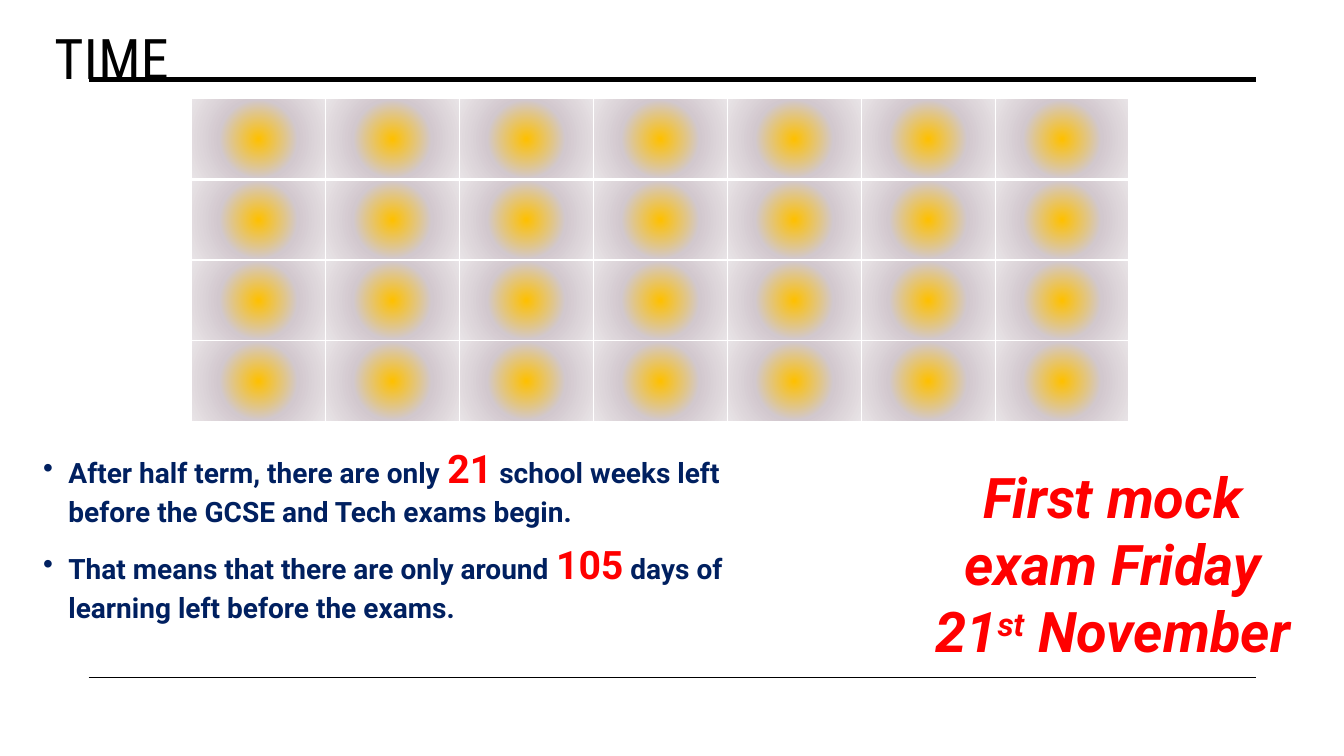
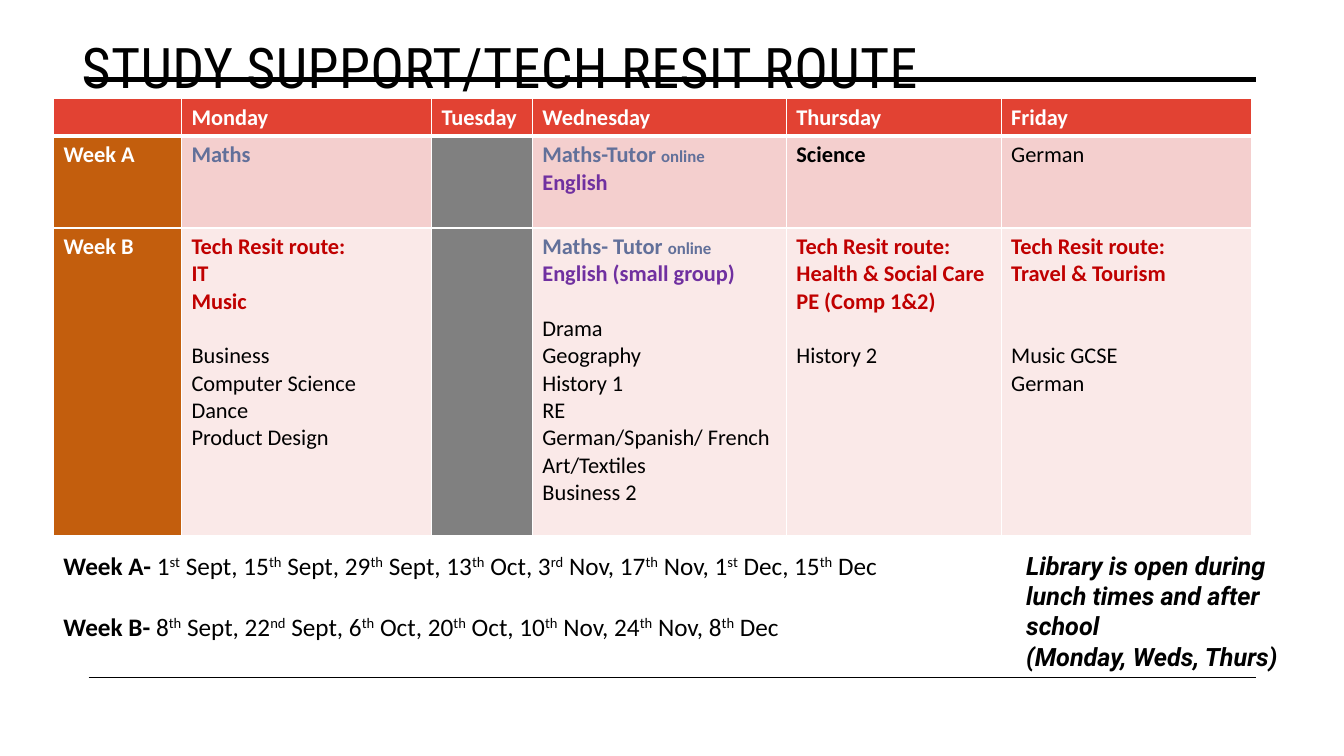
from dataclasses import dataclass, replace
from typing import Optional

from lxml.etree import SubElement
from pptx import Presentation
from pptx.dml.color import RGBColor
from pptx.enum.shapes import MSO_CONNECTOR
from pptx.enum.text import MSO_ANCHOR, MSO_AUTO_SIZE, PP_ALIGN
from pptx.oxml import parse_xml
from pptx.oxml.ns import nsdecls, qn
from pptx.util import Inches, Pt

BLACK, WHITE, RED, NAVY = "000000", "FFFFFF", "FF0000", "002060"
HEADER_RED, WEEK_ORANGE, CLOSED_GREY = "E24233", "C35E0D", "808080"
WEEK_A_PINK, WEEK_B_PINK = "F4CFCE", "FAE9E8"
MATHS_BLUE, ENGLISH_PURPLE, RESIT_RED = "62709A", "7030A0", "C00000"
GLOW_STOPS = ((0, "FFC000"), (50, "D2C8CE"), (100, "E9E4E7"))
TITLE_FONT, BODY_FONT, TABLE_FONT = "Roboto Condensed", "Roboto", "Calibri"


@dataclass(frozen=True)
class Style:
    font: str
    size: float
    color: str = BLACK
    bold: bool = False
    italic: bool = False


@dataclass(frozen=True)
class Span:
    text: str
    style: Style
    raised: bool = False


@dataclass(frozen=True)
class Line:
    spans: list[Span]
    before: float = 0


@dataclass(frozen=True)
class Rule:
    top: float
    weight: float


@dataclass(frozen=True)
class Cell:
    fill: str
    lines: list[Line]


RULES = (Rule(0.79, 3.5), Rule(6.72, 1))
TITLE = Style(TITLE_FONT, 40)
MOCK = Style(BODY_FONT, 40, RED, True, True)
LIBRARY = Style(BODY_FONT, 18, BLACK, True, True)
COUNTDOWN = Style(BODY_FONT, 20, NAVY, True)
COUNT = replace(COUNTDOWN, size=28, color=RED)
DATES = Style(TABLE_FONT, 18)
SUBJECT = Style(TABLE_FONT, 16)
STRONG = replace(SUBJECT, bold=True)
HEADING = replace(STRONG, color=WHITE)
MATHS = replace(STRONG, color=MATHS_BLUE)
ONLINE = replace(MATHS, size=12)
ENGLISH = replace(STRONG, color=ENGLISH_PURPLE)
RESIT = replace(STRONG, color=RESIT_RED)
SUBJECT_GAP, DATES_GAP = 19.5, 22


def rgb(color: str) -> RGBColor:
    return RGBColor.from_string(color)


def marked(text: str, style: Style) -> list[Span]:
    """Turn text into spans; parts between carets are raised."""
    return [Span(part, style, index % 2 == 1)
            for index, part in enumerate(text.split("^"))]


def plain_lines(texts: list[str], style: Style, before: float = 0) -> list[Line]:
    return [Line([Span(text, style)], 0 if index else before)
            for index, text in enumerate(texts)]


def format_run(run, style: Style) -> None:
    font = run.font
    font.name, font.size = style.font, Pt(style.size)
    font.bold, font.italic = style.bold, style.italic
    font.color.rgb = rgb(style.color)


def write_lines(text_frame, lines: list[Line], align=PP_ALIGN.LEFT) -> None:
    for index, line in enumerate(lines):
        paragraph = text_frame.paragraphs[0] if index == 0 else text_frame.add_paragraph()
        paragraph.alignment = align
        paragraph.space_before = Pt(line.before)
        for span in line.spans:
            run = paragraph.add_run()
            run.text = span.text
            format_run(run, span.style)
            if span.raised:
                run._r.get_or_add_rPr().set("baseline", "30000")


def add_text(slide, left: float, top: float, width: float, height: float,
             lines: list[Line], align=PP_ALIGN.LEFT):
    text_frame = slide.shapes.add_textbox(
        Inches(left), Inches(top), Inches(width), Inches(height)).text_frame
    text_frame.word_wrap = True
    write_lines(text_frame, lines, align)
    return text_frame


def add_bullet(slide, top: float, spans: list[Span]) -> None:
    paragraph = add_text(slide, 0.33, top, 7.05, 0.95, [Line(spans)]).paragraphs[0]
    paragraph.line_spacing = 1.1
    properties = paragraph._p.get_or_add_pPr()
    properties.set("marL", str(Inches(0.25)))
    properties.set("indent", str(Inches(-0.25)))
    SubElement(properties, qn("a:buFont")).set("typeface", "Arial")
    SubElement(properties, qn("a:buChar")).set("char", "•")


def add_titled_slide(presentation, title: str, left: float, top: float):
    """Start a slide with the shared rules and title style."""
    slide = presentation.slides.add_slide(presentation.slide_layouts[5])
    for rule in RULES:
        connector = slide.shapes.add_connector(
            MSO_CONNECTOR.STRAIGHT, Inches(0.88), Inches(rule.top),
            Inches(12.46), Inches(rule.top))
        connector.line.color.rgb = rgb(BLACK)
        connector.line.width = Pt(rule.weight)
        SubElement(connector._element.spPr, qn("a:effectLst"))
    shape = slide.shapes.title
    shape.left, shape.top = Inches(left), Inches(top)
    shape.width, shape.height = Inches(11.69), Inches(1.43)
    text_frame = shape.text_frame
    text_frame.word_wrap = True
    text_frame.auto_size = MSO_AUTO_SIZE.NONE
    text_frame.vertical_anchor = MSO_ANCHOR.TOP
    write_lines(text_frame, [Line([Span(title, TITLE)])])
    text_frame.paragraphs[0].runs[0]._r.get_or_add_rPr().set("spc", "30")
    return slide


def add_grid(slide, left: float, top: float, columns: list[float], rows: list[float]):
    table = slide.shapes.add_table(
        len(rows), len(columns), Inches(left), Inches(top),
        Inches(sum(columns)), Inches(sum(rows))).table
    for column, width in zip(table.columns, columns):
        column.width = Inches(width)
    for row, height in zip(table.rows, rows):
        row.height = Inches(height)
    return table


def style_cell(cell, row: int, fill: Optional[str]) -> None:
    """White borders, thick below the first row; no fill colour means a glow."""
    properties = cell._tc.get_or_add_tcPr()
    weights = {"L": 1, "R": 1, "T": 3 if row == 1 else 1, "B": 3 if row == 0 else 1}
    for side, weight in weights.items():
        properties.append(parse_xml(
            f'<a:ln{side} {nsdecls("a")} w="{Pt(weight)}"><a:solidFill>'
            f'<a:srgbClr val="{WHITE}"/></a:solidFill></a:ln{side}>'))
    if fill:
        cell.fill.solid()
        cell.fill.fore_color.rgb = rgb(fill)
        return
    stops = "".join(f'<a:gs pos="{position * 1000}"><a:srgbClr val="{color}"/></a:gs>'
                    for position, color in GLOW_STOPS)
    properties.append(parse_xml(
        f'<a:gradFill {nsdecls("a")} rotWithShape="1"><a:gsLst>{stops}</a:gsLst>'
        '<a:path path="circle"><a:fillToRect l="50000" t="50000" r="50000" b="50000"/>'
        '</a:path></a:gradFill>'))


def build_time(presentation) -> None:
    slide = add_titled_slide(presentation, "TIME", 0.44, 0.18)

    # Four weeks of seven days
    table = add_grid(slide, 1.9, 0.98, [9.3 / 7] * 7, [0.8] * 4)
    for index, cell in enumerate(table.iter_cells()):
        style_cell(cell, index // 7, None)

    # Mock exam date and countdown
    add_text(slide, 9.13, 4.54, 3.81, 2.12,
             [Line(marked("First mock exam Friday 21^st^ November", MOCK))],
             PP_ALIGN.CENTER)
    countdown = (
        ("After half term, there are only ", "21",
         " school weeks left before the GCSE and Tech exams begin."),
        ("That means that there are only around ", "105",
         " days of learning left before the exams."),
    )
    for index, (start, count, end) in enumerate(countdown):
        add_bullet(slide, 4.31 + 0.95 * index,
                   [Span(start, COUNTDOWN), Span(count, COUNT), Span(end, COUNTDOWN)])


def timetable() -> list[list[Cell]]:
    days = ["", "Monday", "Tuesday", "Wednesday", "Thursday", "Friday"]
    header = [Cell(HEADER_RED, plain_lines([day] if day else [], HEADING)) for day in days]
    closed = Cell(CLOSED_GREY, [])

    def week(name: str) -> Cell:
        return Cell(WEEK_ORANGE, plain_lines([name], HEADING))

    def online_maths(text: str) -> Line:
        return Line([Span(text, MATHS), Span("online", ONLINE)])

    def resit(routes: list[str], subjects: list[str], gaps: int = 1) -> Cell:
        return Cell(WEEK_B_PINK, plain_lines(["Tech Resit route:", *routes], RESIT)
                    + plain_lines(subjects, SUBJECT, SUBJECT_GAP * gaps))

    week_a = [
        week("Week A"),
        Cell(WEEK_A_PINK, plain_lines(["Maths"], MATHS)),
        closed,
        Cell(WEEK_A_PINK, [online_maths("Maths-Tutor "), *plain_lines(["English"], ENGLISH)]),
        Cell(WEEK_A_PINK, plain_lines(["Science"], STRONG)),
        Cell(WEEK_A_PINK, plain_lines(["German"], SUBJECT)),
    ]
    wednesday = ["Drama", "Geography", "History 1", "RE", "German/Spanish/ French",
                 "Art/Textiles", "Business 2"]
    week_b = [
        week("Week B"),
        resit(["IT", "Music"], ["Business", "Computer Science", "Dance", "Product Design"]),
        closed,
        Cell(WEEK_B_PINK, [online_maths("Maths- Tutor "),
                           *plain_lines(["English (small group)"], ENGLISH),
                           *plain_lines(wednesday, SUBJECT, SUBJECT_GAP)]),
        resit(["Health & Social Care", "PE (Comp 1&2)"], ["History 2"]),
        resit(["Travel & Tourism"], ["Music GCSE", "German"], 2),
    ]
    return [header, week_a, week_b]


def build_study_support(presentation) -> None:
    slide = add_titled_slide(presentation, "STUDY SUPPORT/TECH RESIT ROUTE", 0.71, 0.27)

    # Two-week timetable
    table = add_grid(slide, 0.53, 0.98, [1.27, 2.48, 1, 2.52, 2.13, 2.48], [0.37, 0.91, 3.05])
    for row, contents in enumerate(timetable()):
        for column, content in enumerate(contents):
            cell = table.cell(row, column)
            style_cell(cell, row, content.fill)
            if content.lines:
                write_lines(cell.text_frame, content.lines)
            else:
                cell.margin_top = cell.margin_bottom = 0

    # Week dates and library hours
    weeks = {
        "Week A- ": "1^st^ Sept, 15^th^ Sept, 29^th^ Sept, 13^th^ Oct, 3^rd^ Nov, "
                    "17^th^ Nov, 1^st^ Dec, 15^th^ Dec",
        "Week B- ": "8^th^ Sept, 22^nd^ Sept, 6^th^ Oct, 20^th^ Oct, 10^th^ Nov, "
                    "24^th^ Nov, 8^th^ Dec",
    }
    lines = [Line([Span(name, replace(DATES, bold=True)), *marked(dates, DATES)],
                  DATES_GAP * index)
             for index, (name, dates) in enumerate(weeks.items())]
    add_text(slide, 0.53, 5.41, 8.88, 1.31, lines)
    add_text(slide, 10.08, 5.41, 3.01, 1.01, plain_lines(
        ["Library is open during lunch times and after school", "(Monday, Weds, Thurs)"],
        LIBRARY))


def main() -> None:
    presentation = Presentation()
    presentation.slide_width, presentation.slide_height = Inches(13.33), Inches(7.5)
    build_time(presentation)
    build_study_support(presentation)
    presentation.save("out.pptx")


if __name__ == "__main__":
    main()
